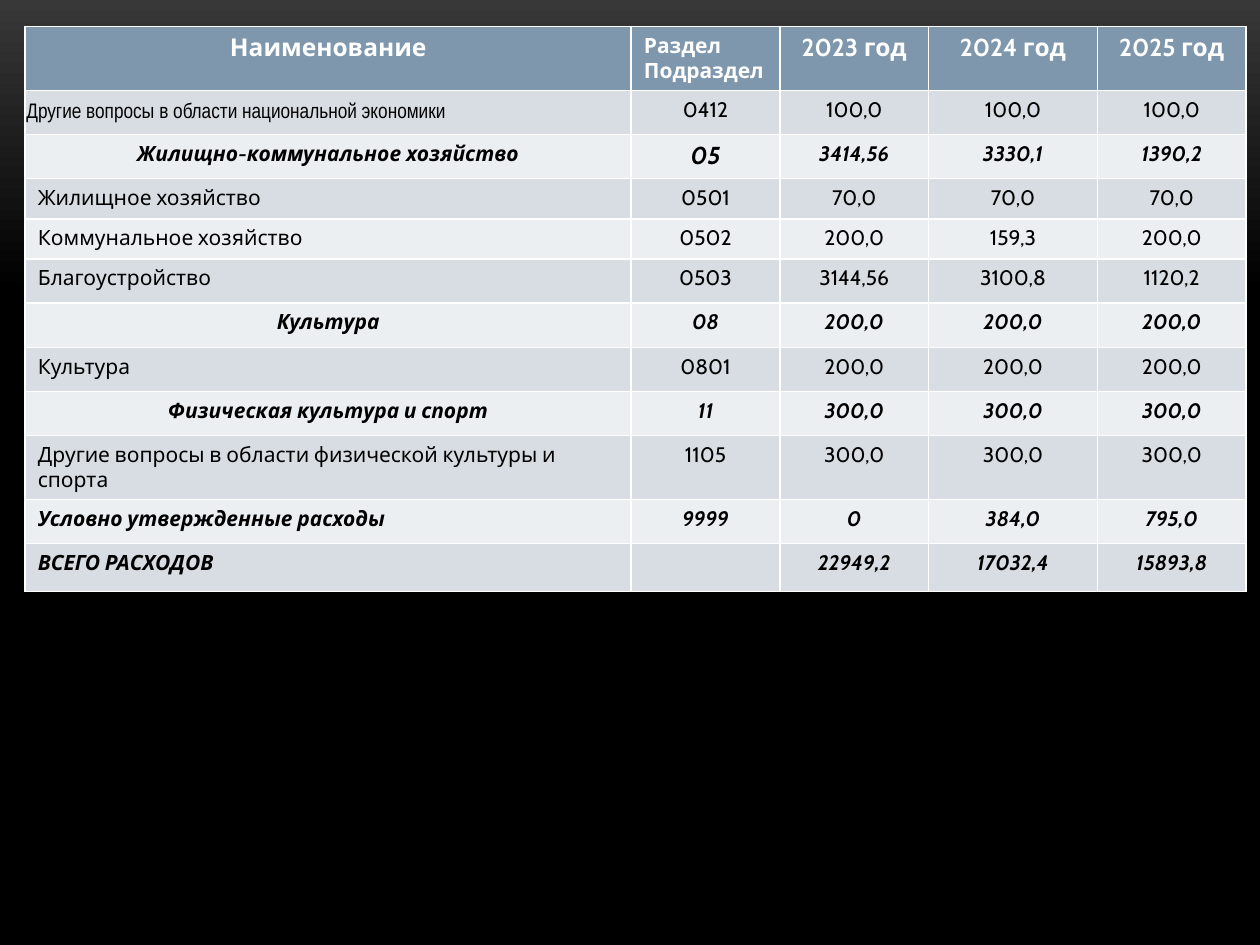
import pptx
import pptx.util
import pptx.dml.color
import pptx.enum.text

Inches = pptx.util.Inches
Pt = pptx.util.Pt
RGB = pptx.dml.color.RGBColor.from_string
ALIGN = pptx.enum.text.PP_ALIGN

theme = {
    "top": RGB("383838"), "base": RGB("000000"),
    "head": RGB("7E97AD"), "odd": RGB("D8DDE3"), "even": RGB("ECEFF1"),
    "light": RGB("FFFFFF"), "dark": RGB("000000"),
    "font": "Cabin", "slim": "Arial Narrow",
    "big": Pt(14), "small": Pt(12),
}

heads = ["Наименование", "Раздел\nПодраздел", "2023 год", "2024 год", "2025 год"]
items = [
    ("plain", "Другие вопросы в области национальной экономики", "0412", "100,0", "100,0", "100,0"),
    ("group", "Жилищно-коммунальное хозяйство", "05", "3414,56", "3330,1", "1390,2"),
    ("plain", "Жилищное хозяйство", "0501", "70,0", "70,0", "70,0"),
    ("plain", "Коммунальное хозяйство", "0502", "200,0", "159,3", "200,0"),
    ("plain", "Благоустройство", "0503", "3144,56", "3100,8", "1120,2"),
    ("group", "Культура", "08", "200,0", "200,0", "200,0"),
    ("plain", "Культура", "0801", "200,0", "200,0", "200,0"),
    ("group", "Физическая культура и спорт", "11", "300,0", "300,0", "300,0"),
    ("plain", "Другие вопросы в области физической культуры и спорта", "1105", "300,0", "300,0", "300,0"),
    ("total", "Условно утвержденные расходы", "9999", "0", "384,0", "795,0"),
    ("total", "ВСЕГО РАСХОДОВ", "", "22949,2", "17032,4", "15893,8"),
]
widths = [4.81, 1.18, 1.18, 1.34, 1.18]
heights = [0.5] + [0.35] * len(items)
heights[3] = heights[4] = 0.32


def write(cell, text, size, color, bold, slant, align, font):
    for n, line in enumerate(text.split("\n")):
        para = cell.text_frame.add_paragraph() if n else cell.text_frame.paragraphs[0]
        para.alignment = align
        run = para.add_run()
        run.text = line
        run.font.name = font
        run.font.size = size
        run.font.bold = bold
        run.font.italic = slant
        run.font.color.rgb = color


deck = pptx.Presentation()
deck.slide_width, deck.slide_height = Inches(10), Inches(7.5)
slide = deck.slides.add_slide(deck.slide_layouts[6])

back = slide.background.fill
back.gradient()
back.gradient_angle = 270
for stop, tone, place in zip(back.gradient_stops, ("top", "base"), (0, 0.31)):
    stop.color.rgb = theme[tone]
    stop.position = place

frame = slide.shapes.add_table(len(heights), len(widths), Inches(0.2), Inches(0.21),
                               Inches(sum(widths)), Inches(sum(heights)))
table = frame.table
for col, width in zip(table.columns, widths):
    col.width = Inches(width)
for row, height in zip(table.rows, heights):
    row.height = Inches(height)

for c, text in enumerate(heads):
    cell = table.cell(0, c)
    cell.fill.solid()
    cell.fill.fore_color.rgb = theme["head"]
    size, align = (theme["small"], ALIGN.LEFT) if c == 1 else (theme["big"], ALIGN.CENTER)
    write(cell, text, size, theme["light"], True, False, align, theme["font"])

for r, (kind, *texts) in enumerate(items, 1):
    strong = kind != "plain"
    for c, text in enumerate(texts):
        cell = table.cell(r, c)
        cell.fill.solid()
        cell.fill.fore_color.rgb = theme["odd" if r % 2 else "even"]
        align = ALIGN.CENTER if c or kind == "group" else ALIGN.LEFT
        size = theme["big" if text == "05" else "small"]
        font = theme["slim" if (r, c) == (1, 0) else "font"]
        write(cell, text, size, theme["dark"], strong, strong, align, font)

first = table.cell(1, 0)
first.vertical_anchor = pptx.enum.text.MSO_ANCHOR.MIDDLE
first.margin_left = first.margin_right = first.margin_top = Inches(0.01)
first.margin_bottom = Inches(0)

deck.save("out.pptx")
